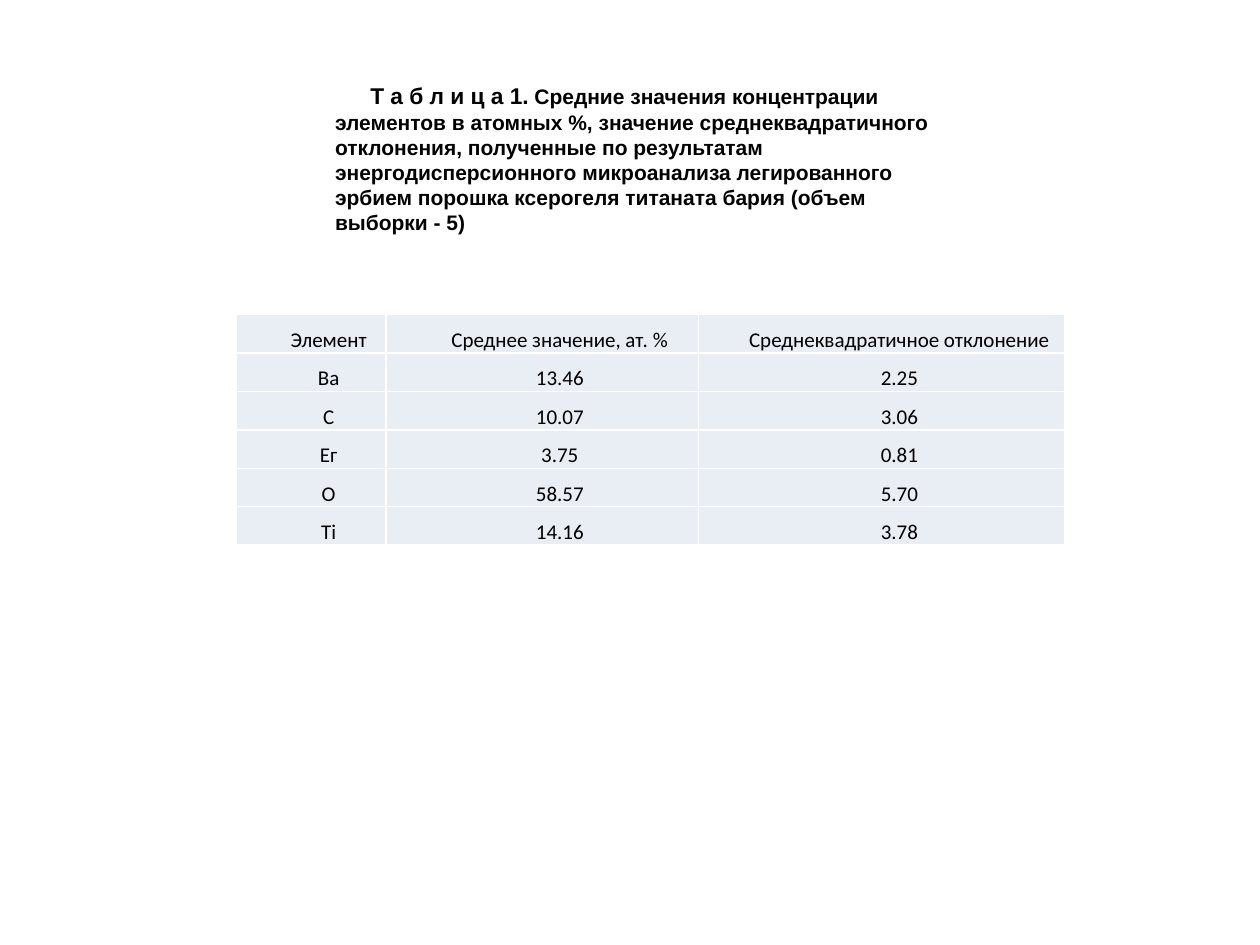
from lxml.etree import SubElement
from pptx import Presentation
from pptx.dml.color import RGBColor
from pptx.enum.text import MSO_ANCHOR, MSO_AUTO_SIZE, PP_ALIGN
from pptx.oxml import parse_xml
from pptx.oxml.ns import nsdecls, qn
from pptx.util import Cm, Pt

# Content
CAPTION = [
    ("Т а б л и ц а 1.", 13),
    (" Средние значения концентрации элементов в атомных %, значение "
     "среднеквадратичного отклонения, полученные по результатам "
     "энергодисперсионного микроанализа легированного эрбием порошка "
     "ксерогеля титаната бария (объем выборки - 5)", 12),
]
ROWS = [
    ("Элемент", "Среднее значение, ат. %", "Среднеквадратичное отклонение"),
    ("Ва", "13.46", "2.25"),
    ("С", "10.07", "3.06"),
    ("Ег", "3.75", "0.81"),
    ("О", "58.57", "5.70"),
    ("Ti", "14.16", "3.78"),
]

# Layout in centimetres
COLUMN_WIDTHS = (3.02, 6.3, 7.39)
HEADER_HEIGHT, ROW_HEIGHT = 0.69, 0.75
FIRST_LINE_INDENT = 0.71
BLACK, WHITE, CELL_FILL = "000000", "FFFFFF", "E9EDF4"


def paint(fill, color):
    fill.solid()
    fill.fore_color.rgb = RGBColor.from_string(color)


def indent_first_line(paragraph):
    properties = paragraph._p.get_or_add_pPr()
    properties.set("marL", "0")
    properties.set("indent", str(Cm(FIRST_LINE_INDENT)))


def add_run(paragraph, text, size, font, bold=False):
    run = paragraph.add_run()
    run.text = text
    run.font.name = font
    run.font.size = Pt(size)
    run.font.bold = bold
    run.font.color.rgb = RGBColor.from_string(BLACK)


def add_borders(cell, color):
    properties = cell._tc.get_or_add_tcPr()
    for position, side in enumerate(("lnL", "lnR", "lnT", "lnB")):
        border = parse_xml(f'<a:{side} {nsdecls("a")} w="{Pt(1)}"/>')
        solid = SubElement(border, qn("a:solidFill"))
        SubElement(solid, qn("a:srgbClr"), val=color)
        properties.insert(position, border)


def add_caption(slide):
    caption = slide.shapes.title
    caption.left, caption.top = Cm(6.5), Cm(1.52)
    caption.width, caption.height = Cm(13.21), Cm(4.14)
    paint(caption.fill, WHITE)
    frame = caption.text_frame
    frame.word_wrap = True
    frame.auto_size = MSO_AUTO_SIZE.NONE
    frame.vertical_anchor = MSO_ANCHOR.TOP
    paragraph = frame.paragraphs[0]
    paragraph.alignment = PP_ALIGN.LEFT
    paragraph.line_spacing = 1.0
    paragraph.space_before = Pt(0)
    indent_first_line(paragraph)
    for text, size in CAPTION:
        add_run(paragraph, text, size, "Arial", bold=True)


def fill_cell(cell, text, is_header, is_number):
    cell.margin_left = cell.margin_right = Cm(0.03)
    cell.margin_top = cell.margin_bottom = 0
    cell.vertical_anchor = MSO_ANCHOR.TOP if is_header else MSO_ANCHOR.BOTTOM
    paint(cell.fill, CELL_FILL)
    add_borders(cell, WHITE)
    paragraph = cell.text_frame.paragraphs[0]
    paragraph.alignment = PP_ALIGN.CENTER
    paragraph.line_spacing = 1.37 if is_number else 1.5
    indent_first_line(paragraph)
    add_run(paragraph, text, 12, "Calibri")


def add_concentrations(slide):
    heights = [HEADER_HEIGHT] + [ROW_HEIGHT] * (len(ROWS) - 1)
    table = slide.shapes.add_table(
        len(ROWS), len(COLUMN_WIDTHS), Cm(4.76), Cm(6.34),
        Cm(sum(COLUMN_WIDTHS)), Cm(sum(heights))).table
    table.first_row = table.horz_banding = False
    for column, width in zip(table.columns, COLUMN_WIDTHS):
        column.width = Cm(width)
    for row, height in zip(table.rows, heights):
        row.height = Cm(height)
    for r, values in enumerate(ROWS):
        for c, text in enumerate(values):
            fill_cell(table.cell(r, c), text, r == 0, r > 0 and c > 0)


def main():
    presentation = Presentation()
    presentation.slide_width, presentation.slide_height = Cm(25.4), Cm(19.05)
    slide = presentation.slides.add_slide(presentation.slide_layouts[5])
    paint(slide.background.fill, WHITE)
    add_caption(slide)
    add_concentrations(slide)
    presentation.save("out.pptx")


if __name__ == "__main__":
    main()
